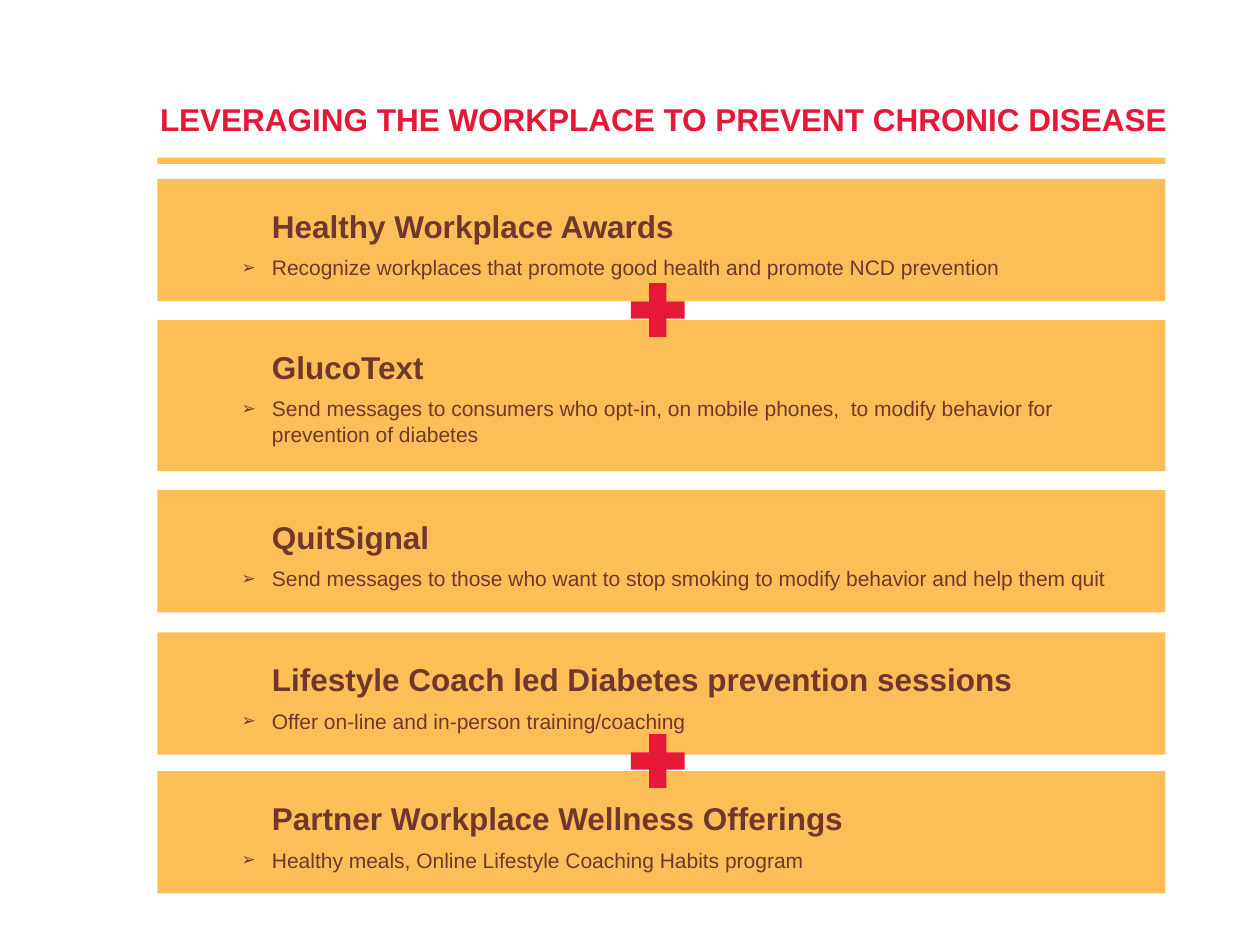
from lxml import etree
from pptx import Presentation
from pptx.dml.color import RGBColor
from pptx.enum.shapes import MSO_SHAPE
from pptx.enum.text import MSO_ANCHOR, MSO_AUTO_SIZE, PP_ALIGN
from pptx.oxml.ns import qn
from pptx.util import Inches, Pt

RECTANGLE, PLUS = MSO_SHAPE.RECTANGLE, MSO_SHAPE.MATH_PLUS
TOP, LEFT, NO_AUTOFIT = MSO_ANCHOR.TOP, PP_ALIGN.LEFT, MSO_AUTO_SIZE.NONE
AMBER, RED, BROWN = "FDBE57", "E51937", "70382D"
BAND_LEFT, BAND_WIDTH = 1.25, 8
TEXT_LEFT, TEXT_WIDTH, TEXT_OFFSET = 1.82, 7.17, 0.17

# top, height, heading, detail
PROGRAMS = [
    (1.42, 0.97, "Healthy Workplace Awards",
     "Recognize workplaces that promote good health and promote NCD prevention"),
    (2.54, 1.2, "GlucoText",
     "Send messages to consumers who opt-in, on mobile phones,  to modify behavior "
     "for prevention of diabetes"),
    (3.89, 0.97, "QuitSignal",
     "Send messages to those who want to stop smoking to modify behavior and help them quit"),
    (5.02, 0.97, "Lifestyle Coach led Diabetes prevention sessions",
     "Offer on-line and in-person training/coaching"),
    (6.12, 0.97, "Partner Workplace Wellness Offerings",
     "Healthy meals, Online Lifestyle Coaching Habits program"),
]


def write(paragraph, text, size=18, color=BROWN, bold=False, after=0, indent=0, bullet=None):
    """Fill a paragraph; a bullet hangs to the left of the indent."""
    run = paragraph.add_run()
    run.text = text
    run.font.name = "Arial"
    run.font.size = Pt(size)
    run.font.bold = bold
    run.font.color.rgb = RGBColor.from_string(color)
    paragraph.alignment = LEFT
    paragraph.space_after = Pt(after)
    properties = paragraph._p.get_or_add_pPr()
    properties.set("marL", str(Inches(indent)))
    properties.set("indent", str(-Inches(indent) if bullet else 0))
    if bullet:
        bullet_color = etree.SubElement(properties, qn("a:buClr"))
        etree.SubElement(bullet_color, qn("a:srgbClr"), val=color)
        etree.SubElement(properties, qn("a:buSzPct"), val="80000")
        etree.SubElement(properties, qn("a:buFont"), typeface="Arial")
        etree.SubElement(properties, qn("a:buChar"), char=bullet)


def add_filled(shapes, kind, left, top, width, height, color):
    shape = shapes.add_shape(kind, Inches(left), Inches(top), Inches(width), Inches(height))
    shape.fill.solid()
    shape.fill.fore_color.rgb = RGBColor.from_string(color)
    shape.line.fill.background()
    shape.shadow.inherit = False


presentation = Presentation()
presentation.slide_width = Inches(10)
presentation.slide_height = Inches(7.5)
slide = presentation.slides.add_slide(presentation.slide_layouts[5])

title = slide.shapes.title
title.left, title.top = Inches(1.17), Inches(0.74)
title.width, title.height = Inches(8.87), Inches(0.75)
title.text_frame.vertical_anchor = TOP
title.text_frame.auto_size = NO_AUTOFIT
write(title.text_frame.paragraphs[0], "LEVERAGING THE WORKPLACE TO PREVENT CHRONIC DISEASE",
      color=RED, bold=True)
add_filled(slide.shapes, RECTANGLE, BAND_LEFT, 1.25, BAND_WIDTH, 0.05, AMBER)

for top, height, heading, detail in PROGRAMS:
    group = slide.shapes.add_group_shape()
    add_filled(group.shapes, RECTANGLE, BAND_LEFT, top, BAND_WIDTH, height, AMBER)
    text_box = group.shapes.add_textbox(
        Inches(TEXT_LEFT), Inches(top + TEXT_OFFSET), Inches(TEXT_WIDTH), Inches(height - 0.3))
    frame = text_box.text_frame
    frame.word_wrap = True
    write(frame.paragraphs[0], heading, bold=True, after=6, indent=0.24)
    detail_paragraph = frame.add_paragraph()
    detail_paragraph.level = 1
    write(detail_paragraph, detail, size=12, after=3, indent=0.24, bullet="➢")

for plus_top in (2.17, 5.75):
    add_filled(slide.shapes, PLUS, 4.93, plus_top, 0.58, 0.58, RED)

presentation.save("out.pptx")
